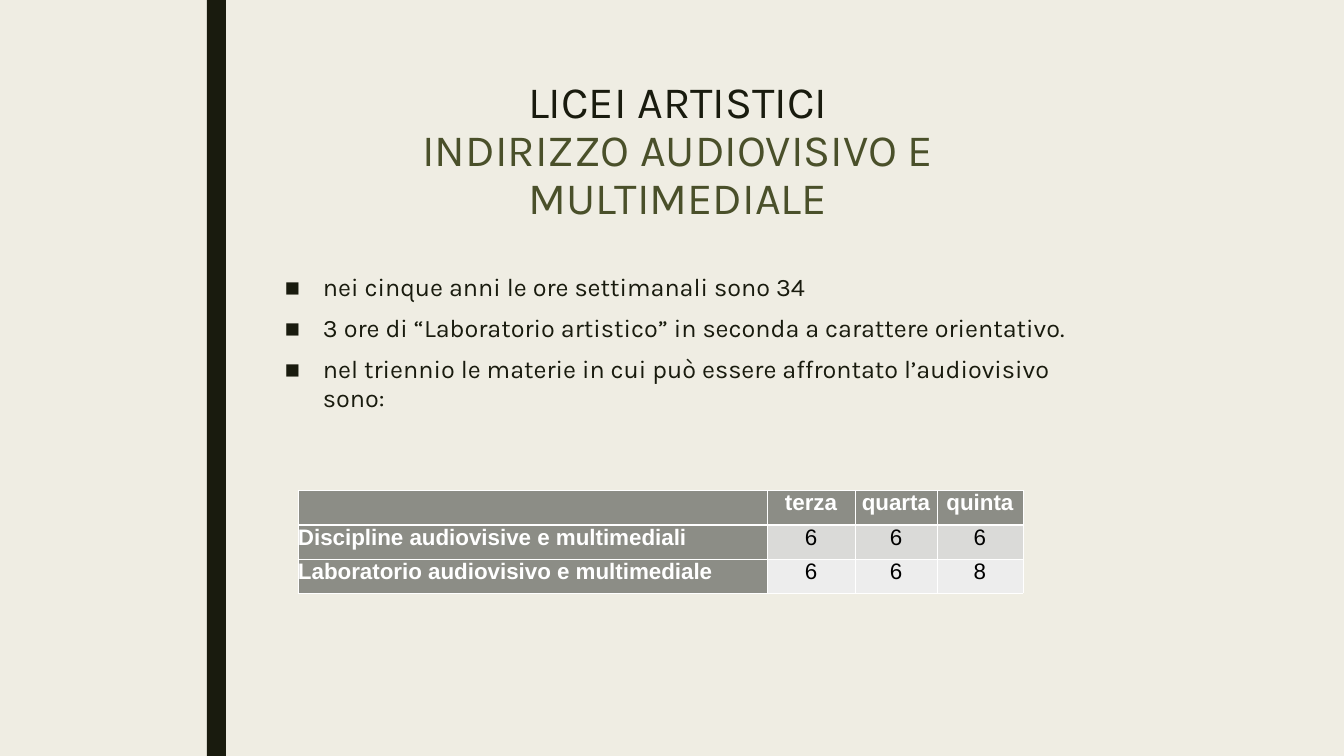
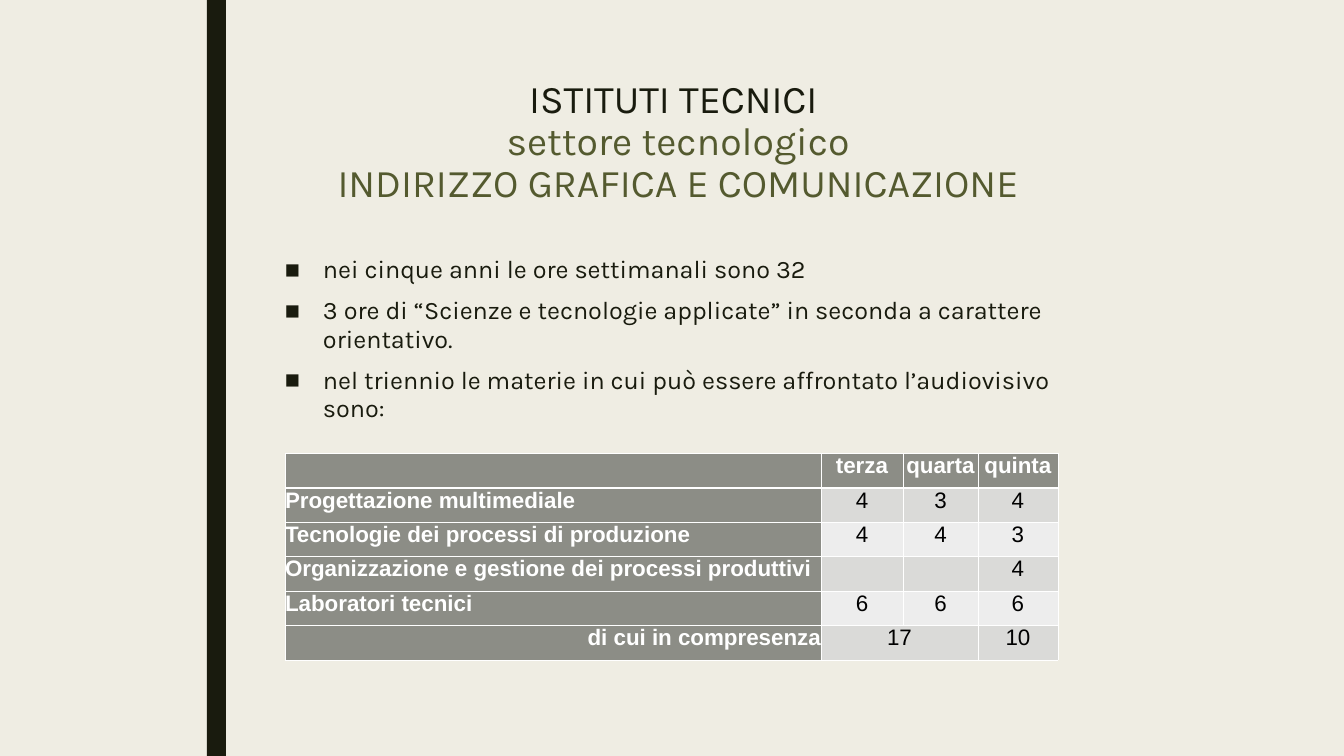
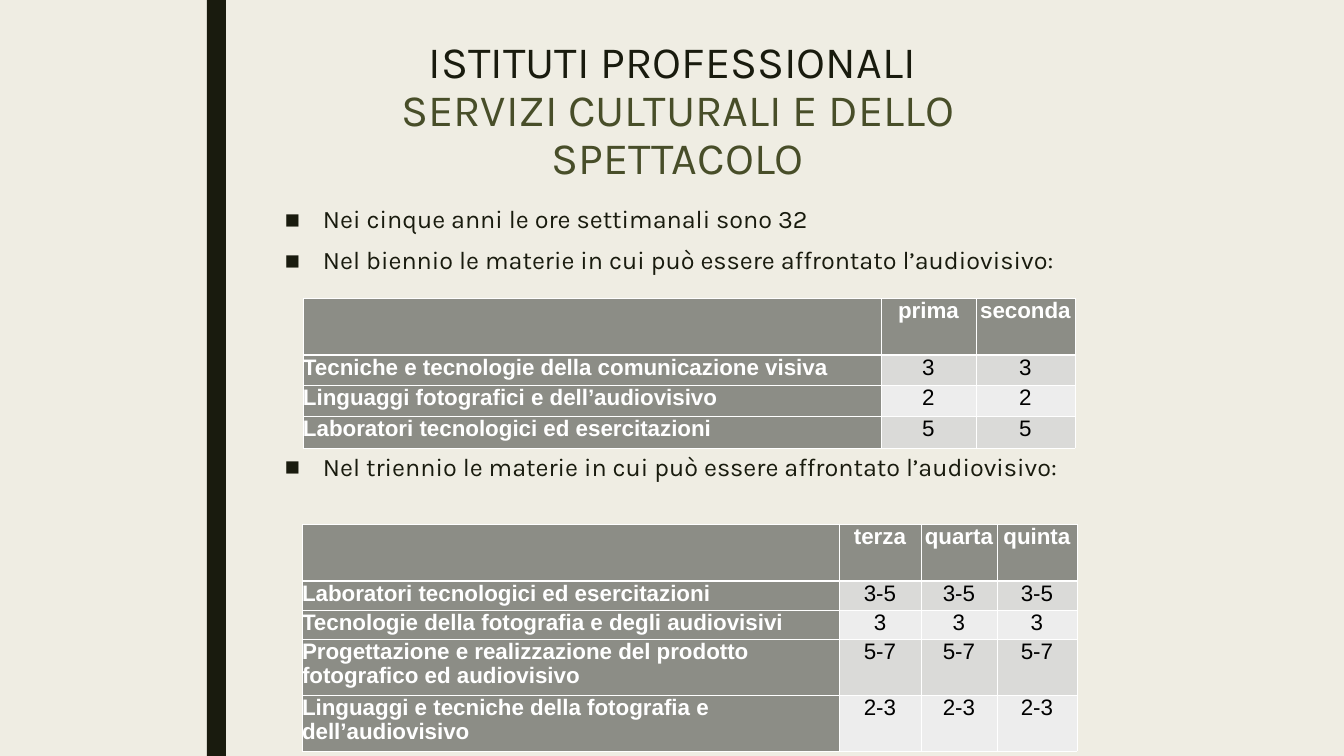
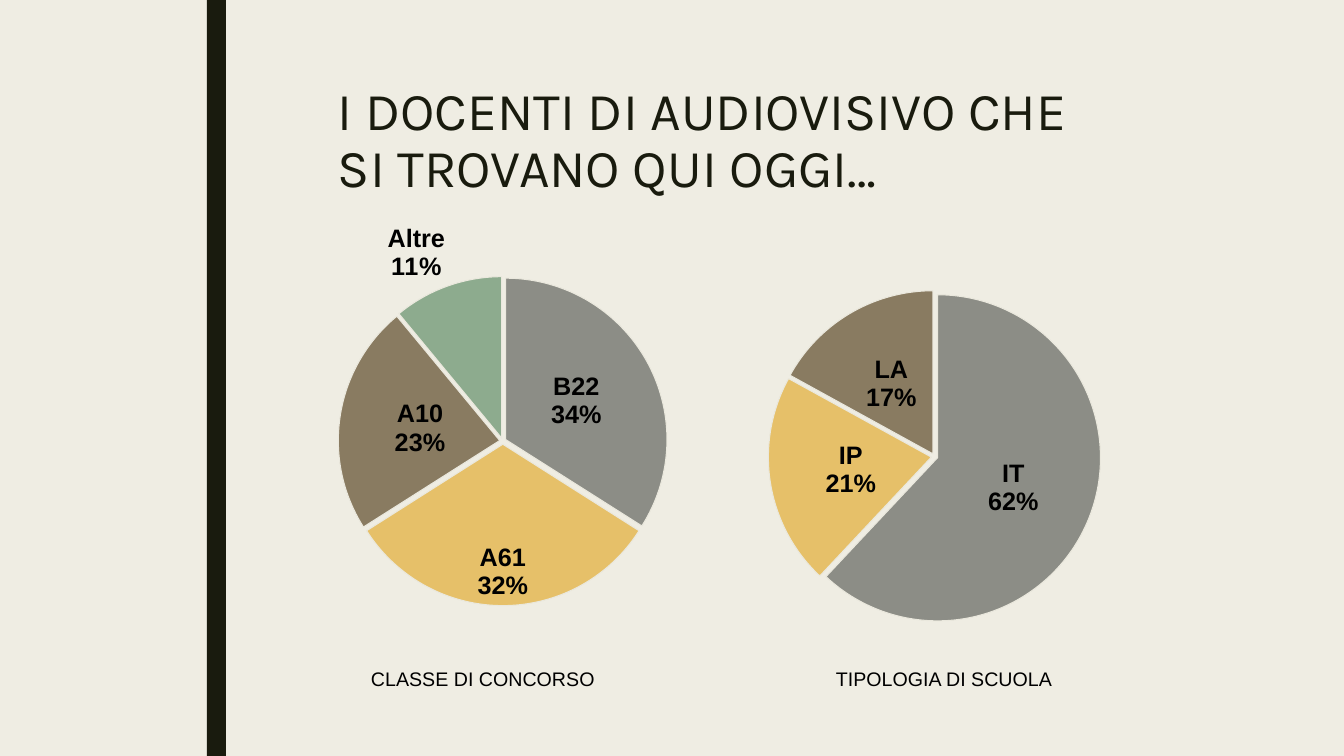
from lxml.etree import SubElement
from pptx import Presentation
from pptx.chart.data import CategoryChartData
from pptx.dml.color import RGBColor
from pptx.enum.chart import XL_CHART_TYPE, XL_LABEL_POSITION
from pptx.enum.shapes import MSO_SHAPE
from pptx.enum.text import PP_ALIGN
from pptx.oxml import parse_xml
from pptx.oxml.ns import nsdecls, qn
from pptx.util import Pt

PX = 12192000 / 1344  # EMU per px
WIDTH, HEIGHT = 1344, 756

PAPER = RGBColor(0xEF, 0xED, 0xE3)
INK = RGBColor(0x19, 0x1B, 0x0E)
OLIVE = RGBColor(0x4A, 0x50, 0x2A)
LIGHT_OLIVE = RGBColor(0x54, 0x5A, 0x2F)
DARK_OLIVE = RGBColor(0x48, 0x4E, 0x29)
BLACK = RGBColor(0, 0, 0)
WHITE = RGBColor(0xFF, 0xFF, 0xFF)
GREY = RGBColor(0x8C, 0x8D, 0x86)
BAND_DARK = RGBColor(0xDA, 0xDA, 0xD8)
BAND_LIGHT = RGBColor(0xED, 0xED, 0xED)
SLICE_EDGE = RGBColor(0xEA, 0xE8, 0xDD)
SLICES = [GREY, RGBColor(0xE6, 0xC0, 0x69), RGBColor(0x89, 0x7B, 0x61), RGBColor(0x8D, 0xAB, 0x8E)]

TITLE = dict(spacing=0.89, align=PP_ALIGN.CENTER)
BULLETS = dict(size=18, spacing=0.94, bulleted=True)
LEFT, TEXT_WIDTH = 281, 794


def add_text(slide, box, lines, size, font="Karla", colors=(INK,), inset=4,
             align=PP_ALIGN.LEFT, spacing=1.0, bulleted=False, wrap=True):
    """Place one paragraph per line; the last colour serves the remaining lines."""
    frame = slide.shapes.add_textbox(*[round(v * PX) for v in box]).text_frame
    frame.word_wrap = wrap
    frame.margin_left = frame.margin_right = round(inset * PX)
    frame.margin_top = frame.margin_bottom = round(inset * PX)
    frame.text = "\n".join(lines)
    for i, paragraph in enumerate(frame.paragraphs):
        paragraph.alignment = align
        paragraph.line_spacing = spacing
        run_font = paragraph.runs[0].font
        run_font.name, run_font.size = font, Pt(size)
        run_font.color.rgb = colors[min(i, len(colors) - 1)]
        if bulleted:
            paragraph.space_before = Pt(9 if i else 0)
            properties = paragraph._p.get_or_add_pPr()
            properties.set("marL", str(round(38 * PX)))
            properties.set("indent", str(round(-38 * PX)))
            bullet_color = SubElement(properties, qn("a:buClr"))
            SubElement(bullet_color, qn("a:srgbClr"), val=str(INK))
            SubElement(properties, qn("a:buFont"), typeface="Arial")
            SubElement(properties, qn("a:buChar"), char="■")


def add_hours(slide, left, top, widths, heights, rows):
    """Table of weekly hours; None joins a cell to the one on its left."""
    table = slide.shapes.add_table(
        len(rows), len(widths), round(left * PX), round(top * PX),
        round(sum(widths) * PX), round(sum(heights) * PX)).table
    for column, width in zip(table.columns, widths):
        column.width = round(width * PX)
    for row, height in zip(table.rows, heights):
        row.height = round(height * PX)
    for r, row in enumerate(rows):
        for c, text in enumerate(row):
            cell = table.cell(r, c)
            heading = r == 0 or c == 0
            cell.margin_left = cell.margin_right = cell.margin_top = cell.margin_bottom = 0
            cell.fill.solid()
            cell.fill.fore_color.rgb = GREY if heading else BAND_DARK if r % 2 else BAND_LIGHT
            # White rules, heavy below the header
            for i, side in enumerate("LRTB"):
                heavy = (r, side) in ((0, "B"), (1, "T"))
                cell._tc.get_or_add_tcPr().insert(i, parse_xml(
                    f'<a:ln{side} {nsdecls("a")} w="{Pt(2 if heavy else 0.25)}"><a:solidFill>'
                    f'<a:srgbClr val="{WHITE}"/></a:solidFill></a:ln{side}>'))
            if text is None:
                table.cell(r, c - 1).merge(cell)
            elif text:
                cell.text = text
                paragraph = cell.text_frame.paragraphs[0]
                paragraph.alignment = PP_ALIGN.CENTER if c else PP_ALIGN.LEFT
                font = paragraph.runs[0].font
                font.name, font.size, font.bold = "Arial", Pt(16), heading
                font.color.rgb = WHITE if heading else BLACK
    return table


prs = Presentation()
prs.slide_width, prs.slide_height = round(WIDTH * PX), round(HEIGHT * PX)

# Shared background and vertical band
background = prs.slide_master.background.fill
background.solid()
background.fore_color.rgb = PAPER
slides = [prs.slides.add_slide(prs.slide_layouts[6]) for _ in range(4)]
for slide in slides:
    band = slide.shapes.add_shape(MSO_SHAPE.RECTANGLE, round(207 * PX), 0,
                                  round(19 * PX), prs.slide_height)
    band.shadow.inherit = False
    band.fill.solid()
    band.fill.fore_color.rgb = INK
    band.line.fill.background()
licei, tecnici, professionali, docenti = slides

# Licei artistici
add_text(licei, (LEFT, 76, TEXT_WIDTH, 163),
         ["LICEI ARTISTICI", "INDIRIZZO AUDIOVISIVO E MULTIMEDIALE"],
         32, colors=(INK, OLIVE), **TITLE)
add_text(licei, (LEFT, 270, TEXT_WIDTH, 190), [
    "nei cinque anni le ore settimanali sono 34",
    "3 ore di “Laboratorio artistico” in seconda a carattere orientativo.",
    "nel triennio le materie in cui può essere affrontato l’audiovisivo sono:"], **BULLETS)
add_hours(licei, 298, 490, [469, 88, 82, 86], [35, 34, 34], [
    ["", "terza", "quarta", "quinta"],
    ["Discipline audiovisive e multimediali", "6", "6", "6"],
    ["Laboratorio audiovisivo e multimediale", "6", "6", "8"]])

# Istituti tecnici
add_text(tecnici, (LEFT, 76, TEXT_WIDTH, 163),
         ["ISTITUTI TECNICI ", "settore tecnologico", "INDIRIZZO GRAFICA E COMUNICAZIONE"],
         28, colors=(INK, LIGHT_OLIVE), **TITLE)
add_text(tecnici, (LEFT, 252, TEXT_WIDTH, 395), [
    "nei cinque anni le ore settimanali sono 32",
    "3 ore di “Scienze e tecnologie applicate” in seconda a carattere orientativo.",
    "nel triennio le materie in cui può essere affrontato l’audiovisivo sono:"], **BULLETS)
ore_tecnici = add_hours(tecnici, 285, 453, [536, 82, 75, 80], [35, 34, 34, 35, 34, 35], [
    ["", "terza", "quarta", "quinta"],
    ["Progettazione multimediale", "4", "3", "4"],
    ["Tecnologie dei processi di produzione", "4", "4", "3"],
    ["Organizzazione e gestione dei processi produttivi", "", "", "4"],
    ["Laboratori tecnici", "6", "6", "6"],
    ["di cui in compresenza", "17", None, "10"]])
ore_tecnici.cell(5, 0).text_frame.paragraphs[0].alignment = PP_ALIGN.RIGHT

# Istituti professionali
add_text(professionali, (LEFT, 36, TEXT_WIDTH, 164),
         ["ISTITUTI PROFESSIONALI ", "SERVIZI CULTURALI E DELLO SPETTACOLO"],
         32, colors=(INK, DARK_OLIVE), **TITLE)
add_text(professionali, (LEFT, 202, TEXT_WIDTH, 93), [
    "Nei cinque anni le ore settimanali sono 32",
    "Nel biennio le materie in cui può essere affrontato l’audiovisivo:"], **BULLETS)
add_hours(professionali, 303, 298, [578, 95, 99], [57, 30, 31, 32], [
    ["", "prima", "seconda"],
    ["Tecniche e tecnologie della comunicazione visiva", "3", "3"],
    ["Linguaggi fotografici e dell’audiovisivo", "2", "2"],
    ["Laboratori tecnologici ed esercitazioni", "5", "5"]])
add_text(professionali, (LEFT, 450, TEXT_WIDTH, 38), [
    "Nel triennio le materie in cui può essere affrontato l’audiovisivo:"], **BULLETS)
add_hours(professionali, 302, 524, [537, 82, 76, 80], [57, 29, 29, 56, 56], [
    ["", "terza", "quarta", "quinta"],
    ["Laboratori tecnologici ed esercitazioni", "3-5", "3-5", "3-5"],
    ["Tecnologie della fotografia e degli audiovisivi", "3", "3", "3"],
    ["Progettazione e realizzazione del prodotto fotografico ed audiovisivo", "5-7", "5-7", "5-7"],
    ["Linguaggi e tecniche della fotografia e dell’audiovisivo", "2-3", "2-3", "2-3"]])

# Docenti: two pies with captions
add_text(docenti, (334, 81, TEXT_WIDTH, 164),
         ["I DOCENTI DI AUDIOVISIVO CHE SI TROVANO QUI OGGI…"], 38, spacing=0.89)
CENTER, INSIDE, OUTSIDE = (XL_LABEL_POSITION.CENTER, XL_LABEL_POSITION.INSIDE_END,
                           XL_LABEL_POSITION.OUTSIDE_END)
pies = [
    ((262, 205, 477, 477), (0.15, 0.15, 0.71, 0.69), 371, "CLASSE DI CONCORSO",
     [("B22", 34, CENTER), ("A61", 32, INSIDE), ("A10", 23, CENTER), ("Altre", 11, OUTSIDE)]),
    ((765, 287, 336, 336), (0.01, 0.01, 0.99, 0.99), 836, "TIPOLOGIA DI SCUOLA",
     [("IT", 62, CENTER), ("IP", 21, CENTER), ("LA", 17, CENTER)]),
]
for box, plot_box, caption_left, caption, shares in pies:
    data = CategoryChartData()
    data.categories = [name for name, _, _ in shares]
    data.add_series("Series 1", [value for _, value, _ in shares])
    chart = docenti.shapes.add_chart(
        XL_CHART_TYPE.PIE, *[round(v * PX) for v in box], data).chart
    chart.has_title = chart.has_legend = False
    chart.font.name, chart.font.size = "Arial", Pt(10)
    chart.font.color.rgb = BLACK
    chart.plots[0].vary_by_categories = True

    # Slices and their labels
    series = chart.plots[0].series[0]
    series.format.fill.solid()
    series.format.fill.fore_color.rgb = GREY
    for i, (_, _, position) in enumerate(shares):
        point = series.points[i]
        point.format.fill.solid()
        point.format.fill.fore_color.rgb = SLICES[i]
        point.format.line.color.rgb = SLICE_EDGE
        point.format.line.width = Pt(0.75)
        font = point.data_label.font
        font.name, font.size, font.bold = "Arial", Pt(18), True
        font.color.rgb = BLACK
        point.data_label.position = position

    # Slice gap, category and percentage on two lines, plot area
    ser = series._element
    ser.find(qn("c:spPr")).addnext(parse_xml(f'<c:explosion {nsdecls("c")} val="2"/>'))
    for tag, shown in (("showVal", "0"), ("showCatName", "1"), ("showPercent", "1")):
        for flag in ser.xpath(f".//c:{tag}"):
            flag.set("val", shown)
    for flag in ser.xpath(".//c:showBubbleSize"):
        flag.addnext(parse_xml(f'<c:separator {nsdecls("c")}>\n</c:separator>'))
    plot_area = chart._chartSpace.xpath(".//c:plotArea")[0]
    for layout in plot_area.findall(qn("c:layout")):
        plot_area.remove(layout)
    measures = "".join(f'<c:{tag} val="{value}"/>' for tag, value in zip("xywh", plot_box))
    plot_area.insert(0, parse_xml(
        f'<c:layout {nsdecls("c")}><c:manualLayout><c:layoutTarget val="inner"/>'
        f'<c:xMode val="edge"/><c:yMode val="edge"/>{measures}</c:manualLayout></c:layout>'))

    add_text(docenti, (caption_left, 667, 224, 22), [caption], 14, font="Arial",
             colors=(BLACK,), inset=0, wrap=False)

prs.save("out.pptx")
